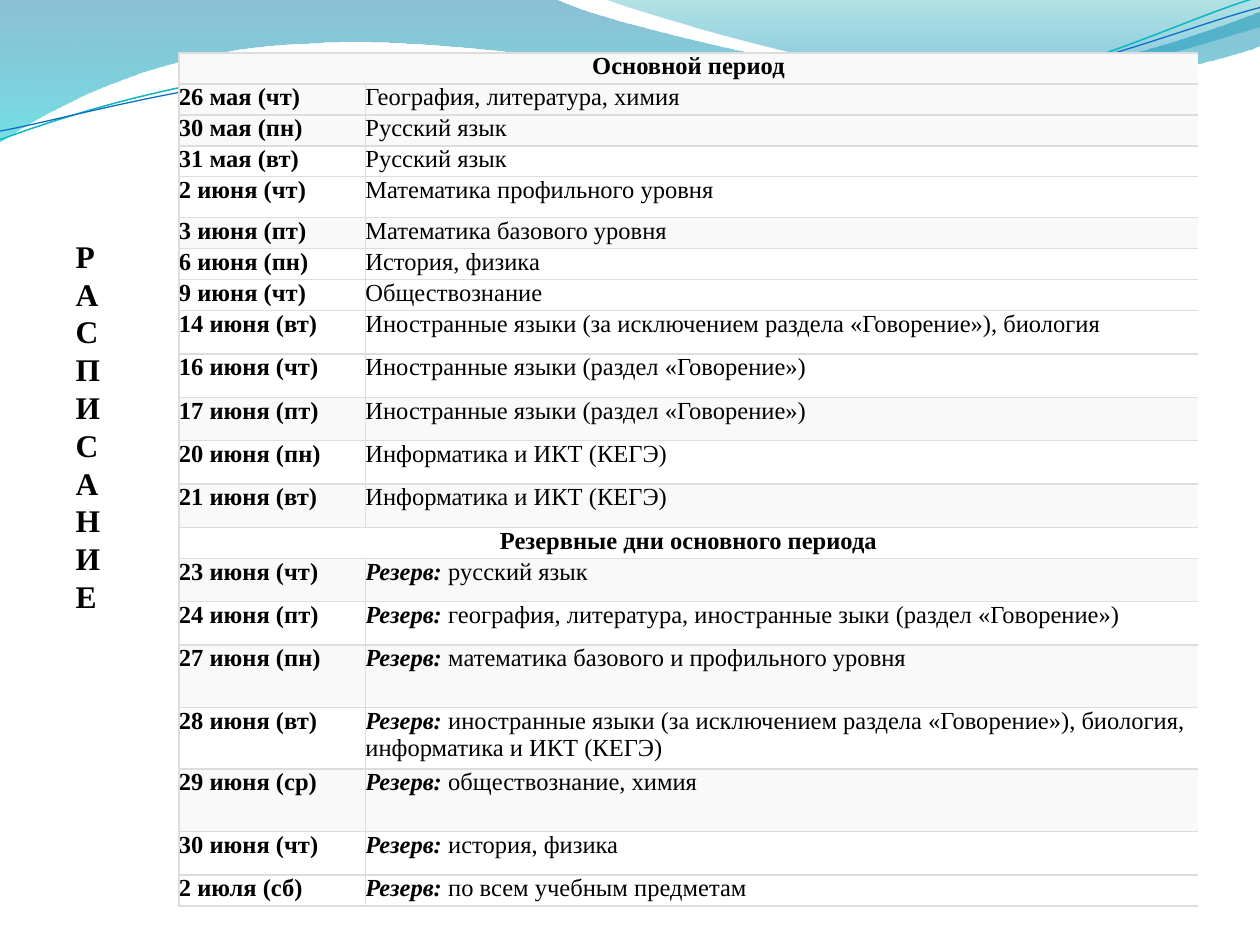
from lxml.etree import SubElement
from pptx import Presentation
from pptx.dml.color import RGBColor
from pptx.enum.text import MSO_ANCHOR, MSO_AUTO_SIZE, PP_ALIGN
from pptx.oxml import parse_xml
from pptx.oxml.ns import nsdecls, qn
from pptx.util import Inches, Pt

THEME = {
    "font": "Times New Roman", "text": "000000", "title_size": 18, "table_size": 14,
    "shaded": "F9F9F9", "plain": "FFFFFF", "border": "DDDDDD", "border_width": 1,
    "no_table_style": "{2D5ABB26-0587-4C30-8999-92F81FD0307C}",
}

# Content
TITLE = "РАСПИСАНИЕ"
RESERVE = "Резерв:"
LOW, BLANK, MEDIUM, MID, TALL = 17.7, 18, 23.4, 24.8, 35.2  # row heights in points
# Date, subjects, row height, shaded; no subjects: heading, no date: blank lower half
SCHEDULE = [
    ("Основной период", None, LOW, True),
    ("26 мая (чт)", "География, литература, химия", LOW, True),
    ("30 мая (пн)", "Русский язык", LOW, True),
    ("31 мая (вт)", "Русский язык", LOW, False),
    ("2 июня (чт)", "Математика профильного уровня", MEDIUM, False),
    ("3 июня (пт)", "Математика базового уровня", LOW, True),
    ("6 июня (пн)", "История, физика", LOW, False),
    ("9 июня (чт)", "Обществознание", LOW, False),
    ("14 июня (вт)", "Иностранные языки (за исключением раздела «Говорение»), биология", MID, False),
    ("16 июня (чт)", "Иностранные языки (раздел «Говорение»)", MID, False),
    ("17 июня (пт)", "Иностранные языки (раздел «Говорение»)", MID, True),
    ("20 июня (пн)", "Информатика и ИКТ (КЕГЭ)", MID, False),
    ("21 июня (вт)", "Информатика и ИКТ (КЕГЭ)", MID, True),
    ("Резервные дни основного периода", None, LOW, False),
    ("23 июня (чт)", "Резерв: русский язык", MID, True),
    ("24 июня (пт)", "Резерв: география, литература, иностранные зыки (раздел «Говорение»)", MID, False),
    ("27 июня (пн)", "Резерв: математика базового и профильного уровня", LOW, True),
    ("", "", BLANK, True),
    ("28 июня (вт)", "Резерв: иностранные языки (за исключением раздела «Говорение»), "
                     "биология, информатика и ИКТ (КЕГЭ)", TALL, False),
    ("29 июня (ср)", "Резерв: обществознание, химия", LOW, True),
    ("", "", BLANK, True),
    ("30 июня (чт)", "Резерв: история, физика", MID, False),
    ("2 июля (сб)", "Резерв: по всем учебным предметам", LOW, False),
]
TABLE_LEFT, TABLE_TOP, COLUMNS = 1.42, 0.42, (1.48, 6.61)

# Wave outlines: a pair is a straight segment, six numbers are a Bezier curve
# Gradient stops: position %, colour, opacity %
WAVES = [
    ([(0, 0), (4.4, -0.01), (4.76, 0.17, 6.64, 0.63, 7.58, 0.63),
      (8.53, 0.63, 9.58, 0.26, 10, 0.09), (10.01, 0.36),
      (9.83, 0.44, 8.7, 0.76, 7.46, 0.75), (6.22, 0.75, 3.82, 0.28, 2.57, 0.34),
      (1.29, 0.36, 0.46, 0.83, -0.01, 1.13), (0, 0)],
     [(0, "0074A1", 45), (100, "00C6CF", 55)]),
    ([(4.79, -0.01), (5.09, 0.11, 6.82, 0.62, 7.69, 0.65),
      (8.56, 0.69, 9.61, 0.32, 10, 0.21), (10, 0), (4.79, -0.01)],
     [(0, "00A1A9", 30), (80, "008BBF", 45)]),
]
WAVE_LINES = [
    ([(0, 1.11), (0.48, 0.93, 1.58, 0.57, 2.77, 0.52), (3.95, 0.47, 5.93, 0.89, 7.13, 0.8),
      (8.33, 0.71, 9.38, 0.15, 9.98, -0.02)], "0AB8BF", 0.85),
    ([(0, 1.04), (0.47, 0.96, 1.64, 0.61, 2.83, 0.56), (4.03, 0.51, 5.97, 0.84, 7.17, 0.75),
      (8.36, 0.67, 9.41, 0.21, 10, 0.06)], "0F6FC6", 0.75),
]


def add_outline(slide, outline, close):
    start, *corners = [(Inches(segment[-2]), Inches(segment[-1])) for segment in outline]
    builder = slide.shapes.build_freeform(*start)
    builder.add_line_segments(corners, close=close)
    wave = builder.convert_to_shape()
    wave.shadow.inherit = False
    wave.fill.background()
    wave.line.fill.background()
    # Bend the straight segments that have control points
    straight = list(wave._element.spPr.iter(qn("a:lnTo")))
    for line_to, segment in zip(straight, outline[1:]):
        if len(segment) == 6:
            line_to.tag = qn("a:cubicBezTo")
            for control, (x, y) in enumerate((segment[:2], segment[2:4])):
                point = parse_xml(f'<a:pt {nsdecls("a")} x="{Inches(x) - wave.left}" '
                                  f'y="{Inches(y) - wave.top}"/>')
                line_to.insert(control, point)
    return wave


def fill_gradient(wave, stops):
    stop_xml = "".join(
        f'<a:gs pos="{position * 1000}"><a:srgbClr val="{color}">'
        f'<a:alpha val="{opacity * 1000}"/></a:srgbClr></a:gs>'
        for position, color, opacity in stops)
    properties = wave._element.spPr
    properties.replace(properties.find(qn("a:noFill")), parse_xml(
        f'<a:gradFill {nsdecls("a")} rotWithShape="1"><a:gsLst>{stop_xml}</a:gsLst>'
        '<a:lin ang="5400000" scaled="0"/></a:gradFill>'))


def style_text(paragraph, size, bold):
    paragraph.font.name = THEME["font"]
    paragraph.font.size = Pt(size)
    paragraph.font.bold = bold
    paragraph.font.color.rgb = RGBColor.from_string(THEME["text"])


def add_borders(cell, sides):
    for side in "LRTB":
        edge = SubElement(cell._tc.get_or_add_tcPr(), qn(f"a:ln{side}"),
                          w=str(Pt(THEME["border_width"])))
        if side in sides:
            SubElement(SubElement(edge, qn("a:solidFill")), qn("a:srgbClr"), val=THEME["border"])
        else:
            SubElement(edge, qn("a:noFill"))


def fill_cell(cell, text, bold, shaded, sides):
    cell.margin_left = cell.margin_right = cell.margin_top = cell.margin_bottom = 0
    add_borders(cell, sides)
    cell.fill.solid()
    cell.fill.fore_color.rgb = RGBColor.from_string(THEME["shaded" if shaded else "plain"])
    paragraph = cell.text_frame.paragraphs[0]
    style_text(paragraph, THEME["table_size"], bold)
    if text.startswith(RESERVE):
        label = paragraph.add_run()
        label.text = RESERVE
        label.font.bold = label.font.italic = True
        text = text.removeprefix(RESERVE)
    if text:
        paragraph.add_run().text = text


def add_schedule(slide):
    table = slide.shapes.add_table(
        len(SCHEDULE), len(COLUMNS), Inches(TABLE_LEFT), Inches(TABLE_TOP),
        Inches(sum(COLUMNS)), Pt(sum(row[2] for row in SCHEDULE))).table
    table.first_row = table.horz_banding = False
    table._tbl.tblPr.find(qn("a:tableStyleId")).text = THEME["no_table_style"]
    for column, width in zip(table.columns, COLUMNS):
        column.width = Inches(width)
    for index, (date, subjects, height, shaded) in enumerate(SCHEDULE):
        table.rows[index].height = Pt(height)
        date_cell, subject_cell = table.cell(index, 0), table.cell(index, 1)
        if subjects is None:
            date_cell.merge(subject_cell)
            date_cell.text_frame.paragraphs[0].alignment = PP_ALIGN.CENTER
            fill_cell(date_cell, date, True, shaded, "LTB")
            add_borders(subject_cell, "TB")
            continue
        continued = index + 1 < len(SCHEDULE) and SCHEDULE[index + 1][0] == ""
        level_sides = ("T" if date else "") + ("" if continued else "B")
        fill_cell(date_cell, date, True, shaded, "LR" + level_sides)
        fill_cell(subject_cell, subjects, False, shaded, "L" + level_sides)


def main():
    presentation = Presentation()
    presentation.slide_width, presentation.slide_height = Inches(10), Inches(7.5)
    slide = presentation.slides.add_slide(presentation.slide_layouts[5])

    # Wave decoration
    for outline, stops in WAVES:
        fill_gradient(add_outline(slide, outline, True), stops)
    for outline, color, width in WAVE_LINES:
        wave_line = add_outline(slide, outline, False).line
        wave_line.color.rgb = RGBColor.from_string(color)
        wave_line.width = Pt(width)

    add_schedule(slide)

    # Title, one letter per line
    title = slide.shapes.title
    title.left, title.top, title.width, title.height = map(Inches, (0.5, 1.83, 0.5, 3.13))
    frame = title.text_frame
    frame.text = "\n".join(TITLE)
    frame.word_wrap = True
    frame.auto_size = MSO_AUTO_SIZE.NONE
    frame.vertical_anchor = MSO_ANCHOR.TOP
    for letter in frame.paragraphs:
        letter.alignment = PP_ALIGN.LEFT
        style_text(letter, THEME["title_size"], True)

    presentation.save("out.pptx")


if __name__ == "__main__":
    main()
